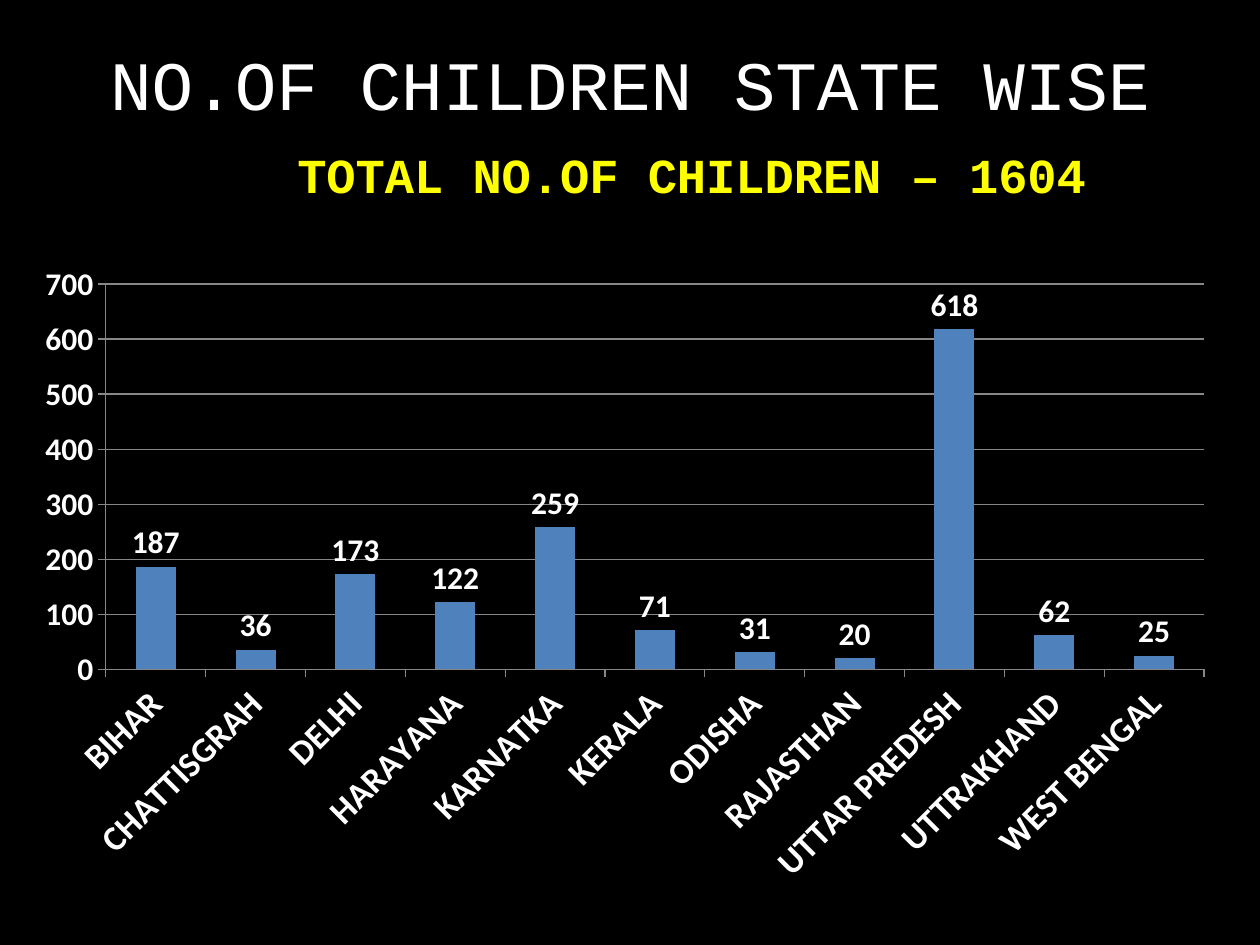
from pptx import Presentation
from pptx.chart.data import CategoryChartData
from pptx.dml.color import RGBColor
from pptx.enum.chart import XL_CHART_TYPE as ChartType, XL_LABEL_POSITION as LabelPosition
from pptx.enum.chart import XL_TICK_MARK as TickMark
from pptx.enum.text import MSO_ANCHOR as Anchor, PP_ALIGN as Align
from pptx.util import Cm, Pt

BLACK, WHITE, YELLOW = "000000", "FFFFFF", "FFFF00"
BLUE, GRAY = "4F81BD", "878787"

CHILDREN = {
    "BIHAR": 187, "CHATTISGRAH": 36, "DELHI": 173, "HARAYANA": 122,
    "KARNATKA": 259, "KERALA": 71, "ODISHA": 31, "RAJASTHAN": 20,
    "UTTAR PREDESH": 618, "UTTRAKHAND": 62, "WEST BENGAL": 25,
}


def rgb(value):
    return RGBColor.from_string(value)


class SlideBuilder:
    heading_font = "Courier New"
    chart_font = "Calibri"

    def __init__(self, page):
        self.page = page

    def background(self, color):
        fill = self.page.background.fill
        fill.solid()
        fill.fore_color.rgb = rgb(color)

    def style(self, font, name, size, color, bold=False):
        font.name, font.size, font.bold = name, Pt(size), bold
        font.color.rgb = rgb(color)

    def heading(self, left, top, width, height, title, subtitle):
        """Add a centred title with a smaller line under it, shifted right."""
        box = self.page.shapes.add_textbox(left, top, width, height)
        frame = box.text_frame
        frame.word_wrap = True
        frame.vertical_anchor = Anchor.TOP
        frame.margin_top = Cm(0.4)
        first, second = frame.paragraphs[0], frame.add_paragraph()
        second.space_before = Pt(11.5)
        second._p.get_or_add_pPr().set("marL", str(Cm(2.5)))
        for para, text, size, color, bold in (
            (first, title, 39.6, WHITE, False),
            (second, subtitle, 27.9, YELLOW, True),
        ):
            para.alignment = Align.CENTER
            span = para.add_run()
            span.text = text
            self.style(span.font, self.heading_font, size, color, bold)

    def axis(self, axis, size):
        axis.major_tick_mark = TickMark.OUTSIDE
        axis.minor_tick_mark = TickMark.NONE
        self.line(axis.format.line)
        self.style(axis.tick_labels.font, self.chart_font, size, WHITE, True)

    def line(self, line):
        line.color.rgb = rgb(GRAY)
        line.width = Pt(0.75)

    def column_chart(self, left, top, width, height, values):
        data = CategoryChartData()
        data.categories = list(values)
        data.add_series("Series 1", list(values.values()))
        chart = self.page.shapes.add_chart(
            ChartType.COLUMN_CLUSTERED, left, top, width, height, data).chart
        chart.has_title = chart.has_legend = False
        self.style(chart.font, self.chart_font, 18, WHITE)

        self.axis(chart.category_axis, 20)
        body = chart.category_axis.tick_labels.font._element.getparent().getparent().getparent()
        body.find("{*}bodyPr").set("rot", "-2700000")
        self.axis(chart.value_axis, 18)
        chart.value_axis.minimum_scale = 0
        chart.value_axis.maximum_scale = 700
        chart.value_axis.major_unit = 100
        chart.value_axis.has_major_gridlines = True
        self.line(chart.value_axis.major_gridlines.format.line)

        plot = chart.plots[0]
        plot.gap_width = 150
        plot.vary_by_categories = False
        fill = plot.series[0].format.fill
        fill.solid()
        fill.fore_color.rgb = rgb(BLUE)
        plot.has_data_labels = True
        labels = plot.data_labels
        labels.show_value = True
        labels.position = LabelPosition.OUTSIDE_END
        self.style(labels.font, self.chart_font, 18, WHITE, True)


def main():
    deck = Presentation()
    deck.slide_width, deck.slide_height = Cm(25.4), Cm(19.05)
    builder = SlideBuilder(deck.slides.add_slide(deck.slide_layouts[6]))
    builder.background(BLACK)
    builder.heading(Cm(1.27), Cm(0.43), Cm(22.86), Cm(3.6),
                    "NO.OF CHILDREN STATE WISE", "TOTAL NO.OF CHILDREN – 1604")
    builder.column_chart(Cm(0.43), Cm(5.08), Cm(24.33), Cm(13), CHILDREN)
    deck.save("out.pptx")


if __name__ == "__main__":
    main()
